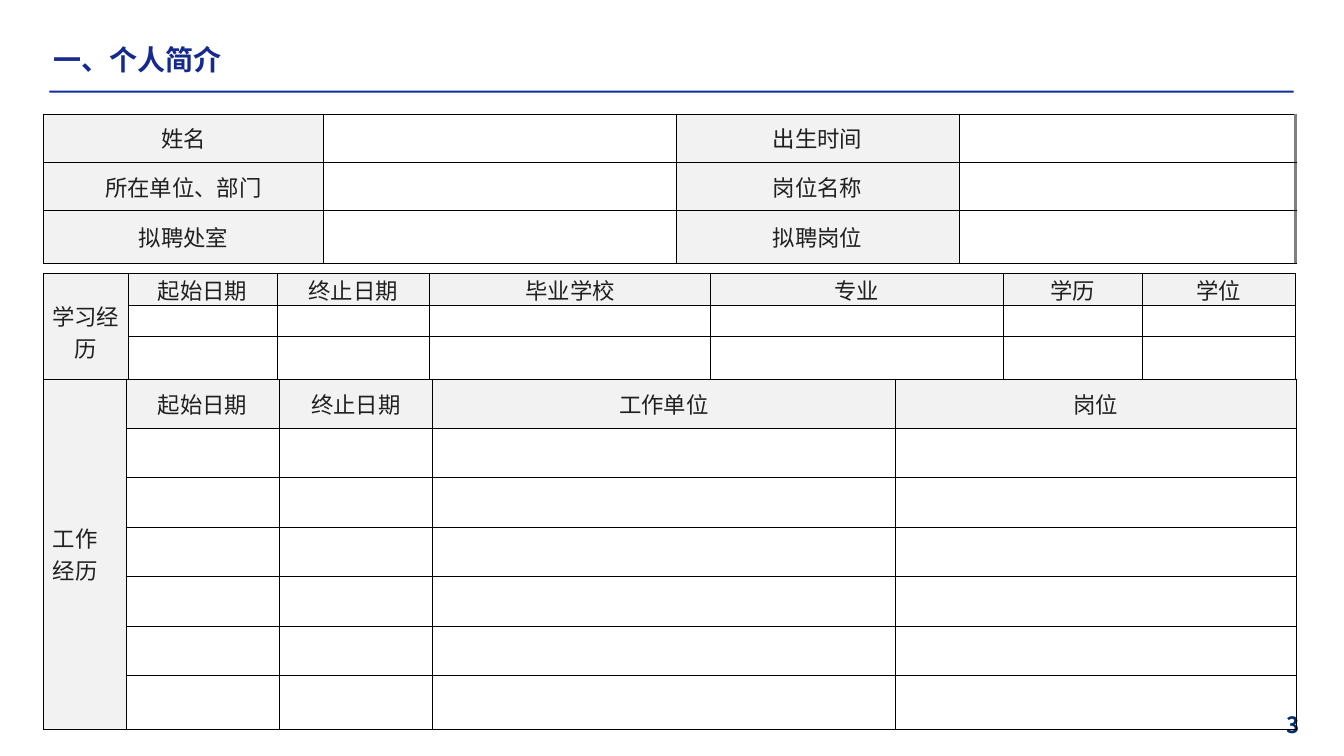
from lxml import etree
from pptx import Presentation
from pptx.dml.color import RGBColor
from pptx.enum.shapes import MSO_SHAPE
from pptx.enum.text import MSO_ANCHOR, PP_ALIGN
from pptx.oxml.ns import qn
from pptx.util import Inches, Pt

RECTANGLE = MSO_SHAPE.RECTANGLE
MIDDLE, TOP = MSO_ANCHOR.MIDDLE, MSO_ANCHOR.TOP
LEFT, CENTER, JUSTIFY = PP_ALIGN.LEFT, PP_ALIGN.CENTER, PP_ALIGN.JUSTIFY

FONT = "Noto Sans CJK SC"
COLORS = {"title": "152A8C", "rule": "112D98", "number": "002C6C", "text": "202020",
          "label": "F2F2F2", "border": "000000", "edge": "808080"}
THIN, THICK = 0.5, 2.25
TABLE_LEFT = 0.43

TEXTS = [
    {"text": "一、个人简介", "box": (TABLE_LEFT, 0.37, 9.44, 0.58), "size": 20,
     "color": "title", "align": JUSTIFY, "anchor": TOP, "inset": 0.1, "wrap": True},
    {"text": "3", "box": (12.67, 7.01, 0.66, 0.36), "size": 16,
     "color": "number", "align": LEFT, "anchor": MIDDLE, "inset": 0.09, "wrap": False},
]

TABLES = [
    {"top": 1.13, "columns": [2.78, 3.5, 2.8, 3.34], "rows": [0.48, 0.48, 0.52],
     "labels": {(0, 0): "姓名", (0, 2): "出生时间",
                (1, 0): "所在单位、部门", (1, 2): "岗位名称",
                (2, 0): "拟聘处室", (2, 2): "拟聘岗位"},
     "right_edge": ("edge", THICK)},
    {"top": 2.71, "columns": [0.84, 1.48, 1.51, 2.79, 2.9, 1.38, 1.52],
     "rows": [0.32, 0.31, 0.42],
     "side": "学习经历", "vertical": True,
     "header": ["起始日期", "终止日期", "毕业学校", "专业", "学历", "学位"]},
    {"top": 3.76, "columns": [0.82, 1.52, 1.52, 4.59, 3.98],
     "rows": [0.49] * 6 + [0.53],
     "side": "工作\v经历", "side_right_inset": 0.19,
     "header": ["起始日期", "终止日期", "工作单位", "岗位"]},
]


def rgb(name):
    return RGBColor.from_string(COLORS[name])


def style_runs(paragraph, size, color, bold=False):
    for run in paragraph.runs:
        for name, value in {"name": FONT, "size": Pt(size), "bold": bold}.items():
            setattr(run.font, name, value)
        run.font.color.rgb = rgb(color)
        latin = run._r.rPr.find(qn("a:latin"))
        east_asian = etree.Element(qn("a:ea"), typeface=FONT)
        latin.addnext(east_asian)


def add_text(slide, item):
    frame = slide.shapes.add_textbox(*map(Inches, item["box"])).text_frame
    frame.word_wrap = item["wrap"]
    frame.vertical_anchor = item["anchor"]
    frame.margin_left = frame.margin_right = Inches(item["inset"])
    paragraph = frame.paragraphs[0]
    paragraph.text = item["text"]
    paragraph.alignment = item["align"]
    style_runs(paragraph, item["size"], item["color"], True)


def set_borders(cell, right_edge):
    properties = cell._tc.get_or_add_tcPr()
    for index, side in enumerate("LRTB"):
        color, width = right_edge if side == "R" else ("border", THIN)
        line = etree.Element(qn(f"a:ln{side}"), w=str(Pt(width)))
        fill = etree.SubElement(line, qn("a:solidFill"))
        etree.SubElement(fill, qn("a:srgbClr"), val=COLORS[color])
        properties.insert(index, line)


def format_cell(cell, label, right_edge):
    for side in ("left", "right", "top", "bottom"):
        setattr(cell, f"margin_{side}", 0)
    cell.vertical_anchor = MIDDLE
    paragraph = cell.text_frame.paragraphs[0]
    if label:
        cell.fill.solid()
        cell.fill.fore_color.rgb = rgb("label")
        paragraph.text = label
        paragraph.alignment = CENTER
        style_runs(paragraph, 16, "text")
    else:
        cell.fill.background()
        etree.SubElement(paragraph._p, qn("a:endParaRPr"), sz="800")
    set_borders(cell, right_edge)


def add_form_table(slide, item):
    columns, rows = item["columns"], item["rows"]
    box = (TABLE_LEFT, item["top"], sum(columns), sum(rows))
    table = slide.shapes.add_table(len(rows), len(columns), *map(Inches, box)).table
    table.first_row = table.horz_banding = False
    for column, width in zip(table.columns, columns):
        column.width = Inches(width)
    for row, height in zip(table.rows, rows):
        row.height = Inches(height)

    labels = dict(item.get("labels", {}))
    if "side" in item:
        labels[0, 0] = item["side"]
        labels.update({(0, index): text for index, text in enumerate(item["header"], 1)})
        table.cell(0, 0).merge(table.cell(len(rows) - 1, 0))

    normal = ("border", THIN)
    for row in range(len(rows)):
        for column in range(len(columns)):
            last = column == len(columns) - 1
            edge = item.get("right_edge", normal) if last else normal
            format_cell(table.cell(row, column), labels.get((row, column)), edge)

    side_cell = table.cell(0, 0)
    side_cell.margin_right = Inches(item.get("side_right_inset", 0))
    if item.get("vertical"):
        side_cell._tc.tcPr.set("vert", "eaVert")


def main():
    presentation = Presentation()
    presentation.slide_width, presentation.slide_height = Inches(13.33), Inches(7.5)
    slide = presentation.slides.add_slide(presentation.slide_layouts[6])

    rule = slide.shapes.add_shape(RECTANGLE, *map(Inches, (0.49, 0.9, 12.34, 0.02)))
    rule.shadow.inherit = False
    rule.fill.solid()
    rule.fill.fore_color.rgb = rgb("rule")
    rule.line.fill.background()

    for item in TEXTS:
        add_text(slide, item)
    for item in TABLES:
        add_form_table(slide, item)
    presentation.save("out.pptx")


if __name__ == "__main__":
    main()
